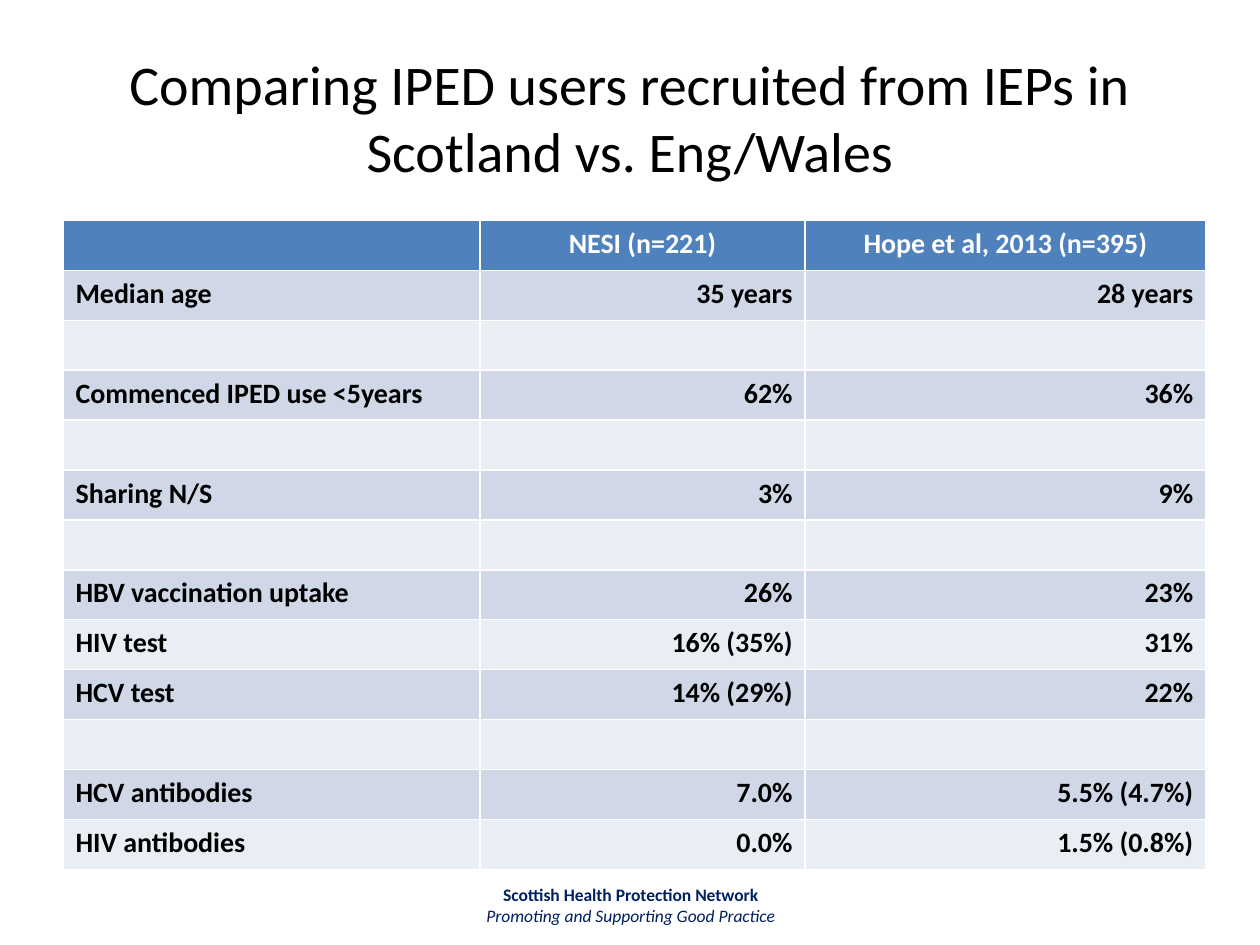
"""Build a slide comparing IPED users in Scotland with England and Wales."""
from pptx import Presentation
from pptx.dml.color import RGBColor
from pptx.enum.text import MSO_ANCHOR, PP_ALIGN
from pptx.util import Inches, Pt

LEFT, CENTER, RIGHT = PP_ALIGN.LEFT, PP_ALIGN.CENTER, PP_ALIGN.RIGHT
MIDDLE = MSO_ANCHOR.MIDDLE

TITLE = "Comparing IPED users recruited from IEPs in Scotland vs. Eng/Wales"
HEADER = ("", "NESI (n=221)", "Hope et al, 2013 (n=395)")
BLANK = ("", "", "")
ROWS = [
    ("Median age", "35 years", "28 years"),
    BLANK,
    ("Commenced IPED use <5years", "62%", "36%"),
    BLANK,
    ("Sharing N/S", "3%", "9%"),
    BLANK,
    ("HBV vaccination uptake", "26%", "23%"),
    ("HIV test", "16% (35%)", "31%"),
    ("HCV test", "14% (29%)", "22%"),
    BLANK,
    ("HCV antibodies", "7.0%", "5.5% (4.7%)"),
    ("HIV antibodies", "0.0%", "1.5% (0.8%)"),
]
FOOTER = ("Scottish Health Protection Network", "Promoting and Supporting Good Practice")
COLUMN_WIDTHS = (3.31, 2.58, 3.18)
TABLE_HEIGHT = 5.15

THEME = {
    "font": "Calibri",
    "title_size": 32, "table_size": 16, "footer_size": 10,
    "text": "000000", "header_text": "FFFFFF", "footer_text": "002060",
    "header_fill": "4F81BD", "bands": ("D0D8E8", "E9EDF4"),
}


def style(paragraph, size, color, alignment, bold=False, italic=False):
    paragraph.alignment = alignment
    font = paragraph.font
    font.name, font.size = THEME["font"], Pt(THEME[size])
    font.bold, font.italic = bold, italic
    font.color.rgb = RGBColor.from_string(THEME[color])


def add_title(slide):
    title = slide.shapes.title
    title.left, title.top = Inches(0.5), Inches(0.3)
    title.width, title.height = Inches(9), Inches(1.25)
    title.text_frame.text = TITLE
    title.text_frame.vertical_anchor = MIDDLE
    style(title.text_frame.paragraphs[0], "title_size", "text", CENTER)


def add_comparison_table(slide):
    lines = [HEADER, *ROWS]
    table = slide.shapes.add_table(
        len(lines), len(HEADER), Inches(0.5), Inches(1.75),
        Inches(sum(COLUMN_WIDTHS)), Inches(TABLE_HEIGHT)).table
    for column, width in zip(table.columns, COLUMN_WIDTHS):
        column.width = Inches(width)
    for row_index, values in enumerate(lines):
        is_header = row_index == 0
        fill = THEME["header_fill"] if is_header else THEME["bands"][(row_index - 1) % 2]
        color = "header_text" if is_header else "text"
        table.rows[row_index].height = Inches(TABLE_HEIGHT / len(lines))
        for column_index, value in enumerate(values):
            cell = table.cell(row_index, column_index)
            cell.text = value
            cell.margin_bottom = Inches(0.03)
            cell.fill.solid()
            cell.fill.fore_color.rgb = RGBColor.from_string(fill)
            alignment = CENTER if is_header else RIGHT if column_index else LEFT
            style(cell.text_frame.paragraphs[0], "table_size", color, alignment, bold=True)


def add_footer(slide):
    footer = slide.shapes.add_textbox(Inches(3.42), Inches(6.97), Inches(3.17), Inches(0.4))
    frame = footer.text_frame
    frame.word_wrap = True
    frame.text = "\n".join(FOOTER)
    network, motto = frame.paragraphs
    style(network, "footer_size", "footer_text", CENTER, bold=True)
    style(motto, "footer_size", "footer_text", CENTER, italic=True)


def main():
    presentation = Presentation()
    presentation.slide_width, presentation.slide_height = Inches(10), Inches(7.5)
    slide = presentation.slides.add_slide(presentation.slide_layouts[5])
    add_footer(slide)
    add_title(slide)
    add_comparison_table(slide)
    presentation.save("out.pptx")


if __name__ == "__main__":
    main()
